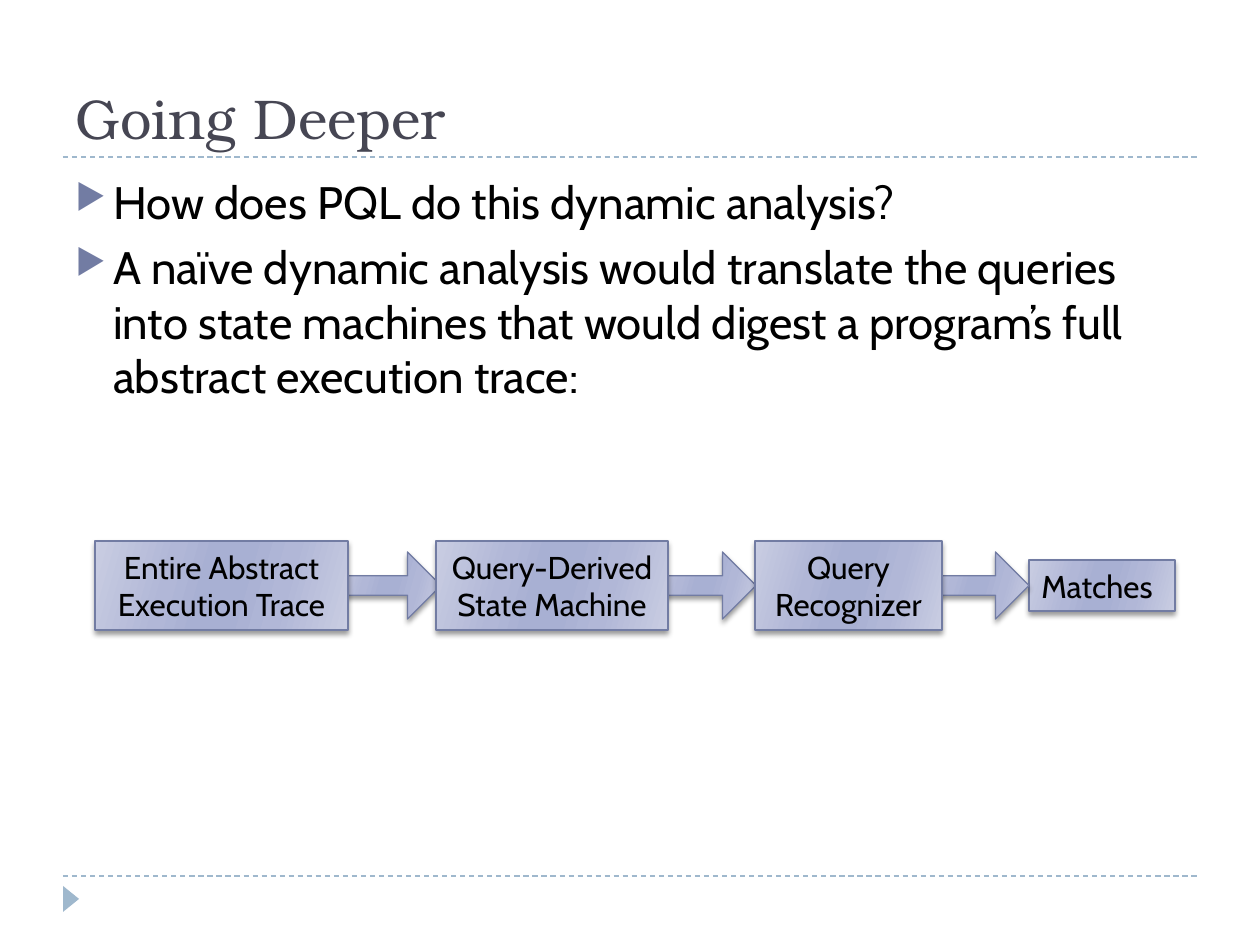
from dataclasses import dataclass

from lxml import etree
from pptx import Presentation
from pptx.dml.color import RGBColor
from pptx.enum.dml import MSO_LINE
from pptx.enum.shapes import MSO_CONNECTOR, MSO_SHAPE
from pptx.enum.text import MSO_ANCHOR, PP_ALIGN
from pptx.oxml import parse_xml
from pptx.oxml.ns import nsdecls, qn
from pptx.util import Emu, Pt

RECTANGLE, ARROW, TRIANGLE = MSO_SHAPE.RECTANGLE, MSO_SHAPE.RIGHT_ARROW, MSO_SHAPE.ISOSCELES_TRIANGLE
STRAIGHT, DASH = MSO_CONNECTOR.STRAIGHT, MSO_LINE.DASH
TOP, MIDDLE, BOTTOM = MSO_ANCHOR.TOP, MSO_ANCHOR.MIDDLE, MSO_ANCHOR.BOTTOM
LEFT, CENTER = PP_ALIGN.LEFT, PP_ALIGN.CENTER
EMU_PER_PX = 914400 // 126


@dataclass(frozen=True)
class Theme:
    title_font: str = "TeX Gyre Bonum"
    body_font: str = "Cabin"
    title_color: str = "464653"
    text_color: str = "000000"
    accent: str = "727CA3"
    rule_color: str = "9FB8CD"
    # Gradient stops: position in percent, colour
    gradient: tuple = ((0, "C9CDE2"), (30, "B1B7D7"), (45, "A8B0D3"),
                       (55, "A8B0D3"), (73, "B1B7D7"), (100, "C9CDE2"))
    gradient_angle: int = 16
    title_size: int = 32
    body_size: int = 26
    box_size: int = 18
    line_width: float = 0.75


THEME = Theme()


def px(*lengths):
    return [Emu(length * EMU_PER_PX) for length in lengths]


def write_text(shape, text, font=THEME.body_font, size=THEME.box_size,
               color=THEME.text_color, align=LEFT, anchor=TOP):
    """Newlines start paragraphs; vertical tabs break lines."""
    frame = shape.text_frame
    frame.word_wrap = True
    frame.vertical_anchor = anchor
    frame.text = text
    for paragraph in frame.paragraphs:
        paragraph.alignment = align
        for run in paragraph.runs:
            run.font.name = font
            run.font.size = Pt(size)
            run.font.color.rgb = RGBColor.from_string(color)
    return frame


def add_bullet(paragraph):
    paragraph.space_before = Pt(6)
    properties = paragraph._p.get_or_add_pPr()
    indent = 274320
    properties.set("marL", str(indent))
    properties.set("indent", str(-indent))
    color = etree.SubElement(properties, qn("a:buClr"))
    etree.SubElement(color, qn("a:srgbClr"), val=THEME.accent)
    etree.SubElement(properties, qn("a:buSzPct"), val="76000")
    etree.SubElement(properties, qn("a:buChar"), char="▶")


def add_rule(slide, y):
    rule = slide.shapes.add_connector(STRAIGHT, *px(63, y, 1197, y))
    rule.line.color.rgb = RGBColor.from_string(THEME.rule_color)
    rule.line.width = Pt(THEME.line_width)
    rule.line.dash_style = DASH
    etree.SubElement(rule._element.spPr, qn("a:effectLst"))


def add_corner_triangle(slide):
    triangle = slide.shapes.add_shape(TRIANGLE, *px(58, 891, 26, 16))
    triangle.rotation = 90
    triangle.shadow.inherit = False
    triangle.fill.solid()
    triangle.fill.fore_color.rgb = RGBColor.from_string(THEME.rule_color)
    triangle.line.fill.background()


def add_glossy_shape(slide, kind, left, top, width, height):
    shape = slide.shapes.add_shape(kind, *px(left, top, width, height))
    properties = shape._element.spPr
    # Gradient fill
    stops = "".join(
        f'<a:gs pos="{position * 1000}"><a:srgbClr val="{color}"/></a:gs>'
        for position, color in THEME.gradient)
    properties.find(qn("a:prstGeom")).addnext(parse_xml(
        f'<a:gradFill {nsdecls("a")} rotWithShape="1"><a:gsLst>{stops}</a:gsLst>'
        f'<a:lin ang="{THEME.gradient_angle * 60000}" scaled="0"/></a:gradFill>'))
    shape.line.color.rgb = RGBColor.from_string(THEME.accent)
    shape.line.width = Pt(THEME.line_width)
    # Soft shadow below
    shape.shadow.inherit = False
    properties.find(qn("a:effectLst")).append(parse_xml(
        f'<a:outerShdw {nsdecls("a")} blurRad="{Pt(3)}" dist="{Pt(2)}" '
        'dir="5400000" rotWithShape="0"><a:srgbClr val="000000">'
        '<a:alpha val="40000"/></a:srgbClr></a:outerShdw>'))
    return shape


def add_arrow(slide, left):
    arrow = add_glossy_shape(slide, ARROW, left, 552, 105, 67)
    arrow.adjustments[0] = 0.29
    arrow.adjustments[1] = 0.5


def add_box(slide, text, left, width, top=541, height=89, align=CENTER):
    box = add_glossy_shape(slide, RECTANGLE, left, top, width, height)
    write_text(box, text, align=align, anchor=MIDDLE)


def main():
    presentation = Presentation()
    presentation.slide_width, presentation.slide_height = px(1260, 945)
    slide = presentation.slides.add_slide(presentation.slide_layouts[6])

    # Page furniture
    for y in (876, 157):
        add_rule(slide, y)
    add_corner_triangle(slide)

    # Title and bullets
    title = slide.shapes.add_textbox(*px(63, 21, 1134, 136))
    write_text(title, "Going Deeper", font=THEME.title_font,
               size=THEME.title_size, color=THEME.title_color, anchor=BOTTOM)
    body = slide.shapes.add_textbox(*px(63, 168, 1134, 273))
    frame = write_text(
        body,
        "How does PQL do this dynamic analysis?\n"
        "A naïve dynamic analysis would translate the queries into state "
        "machines that would digest a program’s full abstract execution trace:",
        size=THEME.body_size)
    for paragraph in frame.paragraphs:
        add_bullet(paragraph)

    # Pipeline: arrows lie under the boxes they leave
    add_box(slide, "Matches", 1029, 146, top=560, height=51, align=LEFT)
    for left in (336, 651, 924):
        add_arrow(slide, left)
    for text, left, width in (
            ("Entire Abstract\vExecution Trace", 95, 253),
            ("Query-Derived\nState Machine", 436, 232),
            ("Query\nRecognizer", 755, 187)):
        add_box(slide, text, left, width)

    presentation.save("out.pptx")


if __name__ == "__main__":
    main()
